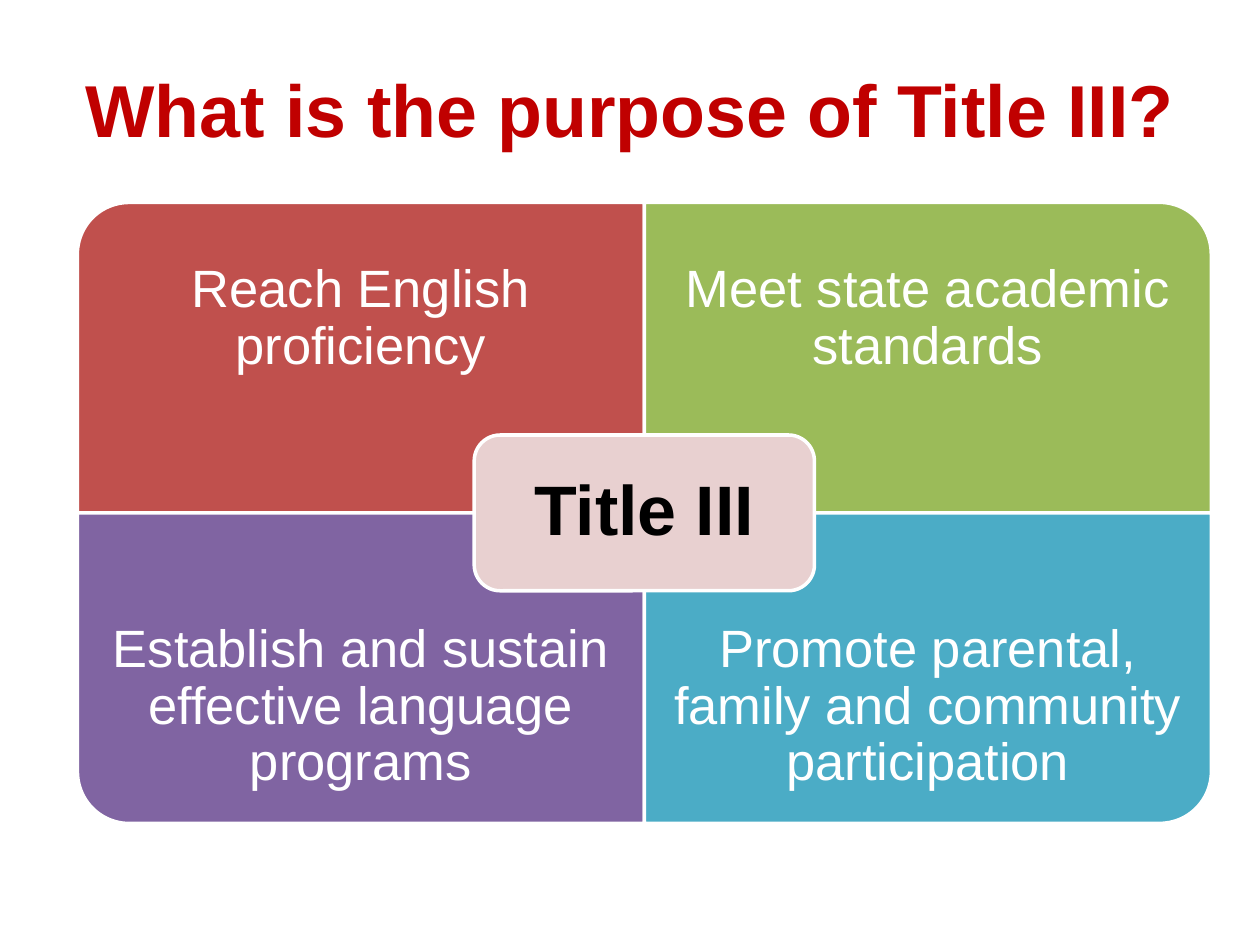
from pptx import Presentation
from pptx.dml.color import RGBColor
from pptx.enum.shapes import MSO_SHAPE
from pptx.enum.text import MSO_ANCHOR, PP_ALIGN
from pptx.util import Cm, Pt

ONE_ROUND = MSO_SHAPE.ROUND_1_RECTANGLE
ALL_ROUND = MSO_SHAPE.ROUNDED_RECTANGLE
MIDDLE = MSO_ANCHOR.MIDDLE
CENTER = PP_ALIGN.CENTER

COLORS = {
    "title": "C00000",
    "red": "C0504D",
    "green": "9BBB59",
    "purple": "8064A2",
    "blue": "4BACC6",
    "pink": "E8D0D0",
    "white": "FFFFFF",
    "black": "000000",
}

# Matrix measures in centimetres
LEFT, TOP = 1.56, 4.08
TILE_WIDTH, TILE_HEIGHT = 11.43, 6.26
LABEL_HEIGHT = TILE_HEIGHT * 0.75
HUB_WIDTH, HUB_HEIGHT = 6.86, 3.14

# Column, row, rotation that turns the round corner outwards, colour, label
QUADRANTS = [
    (0, 0, 270, "red", "Reach English proficiency"),
    (1, 0, 0, "green", "Meet state academic standards"),
    (0, 1, 180, "purple", "Establish and sustain effective language programs"),
    (1, 1, 90, "blue", "Promote parental, family and community participation"),
]


def color(name):
    return RGBColor.from_string(COLORS[name])


def write_text(frame, text, size, color_name, margin, bold=False):
    frame.word_wrap = True
    frame.vertical_anchor = MIDDLE
    frame.margin_left = frame.margin_right = Cm(margin)
    frame.margin_top = frame.margin_bottom = Cm(margin)
    frame.text = text
    paragraph = frame.paragraphs[0]
    paragraph.alignment = CENTER
    paragraph.line_spacing = 0.9
    paragraph.font.name = "Arial"
    paragraph.font.size = Pt(size)
    paragraph.font.bold = bold
    paragraph.font.color.rgb = color(color_name)


def add_panel(slide, kind, center_x, center_y, width, height, fill, rotation=0):
    """Add a white-edged panel around a centre; sizes are those seen on the slide."""
    if rotation % 180:
        width, height = height, width
    panel = slide.shapes.add_shape(
        kind, Cm(center_x - width / 2), Cm(center_y - height / 2), Cm(width), Cm(height))
    panel.rotation = rotation
    panel.shadow.inherit = False
    panel.fill.solid()
    panel.fill.fore_color.rgb = color(fill)
    panel.line.color.rgb = color("white")
    panel.line.width = Pt(2)
    return panel


def add_title(slide, text):
    title = slide.shapes.title
    title.left, title.top = Cm(1.27), Cm(1.27)
    title.width, title.height = Cm(22.86), Cm(1.8)
    write_text(title.text_frame, text, 42, "title", 0, bold=True)
    title.text_frame.paragraphs[0].line_spacing = 1.0


def add_quadrant(slide, column, row, rotation, fill, text):
    """Add a tile with its label in the three quarters away from the hub."""
    left = LEFT + column * TILE_WIDTH
    top = TOP + row * TILE_HEIGHT
    add_panel(slide, ONE_ROUND, left + TILE_WIDTH / 2, top + TILE_HEIGHT / 2,
              TILE_WIDTH, TILE_HEIGHT, fill, rotation)
    label_top = top + row * (TILE_HEIGHT - LABEL_HEIGHT)
    label = slide.shapes.add_textbox(
        Cm(left), Cm(label_top), Cm(TILE_WIDTH), Cm(LABEL_HEIGHT))
    write_text(label.text_frame, text, 30, "white", 0.58)


def add_hub(slide, text):
    hub = add_panel(slide, ALL_ROUND, LEFT + TILE_WIDTH, TOP + TILE_HEIGHT,
                    HUB_WIDTH, HUB_HEIGHT, "pink")
    write_text(hub.text_frame, text, 40, "black", 0.43, bold=True)


def main():
    deck = Presentation()
    deck.slide_width, deck.slide_height = Cm(25.4), Cm(19.05)
    slide = deck.slides.add_slide(deck.slide_layouts.get_by_name("Title Only"))
    add_title(slide, "What is the purpose of Title III?")
    for quadrant in QUADRANTS:
        add_quadrant(slide, *quadrant)
    add_hub(slide, "Title III")
    deck.save("out.pptx")


if __name__ == "__main__":
    main()
